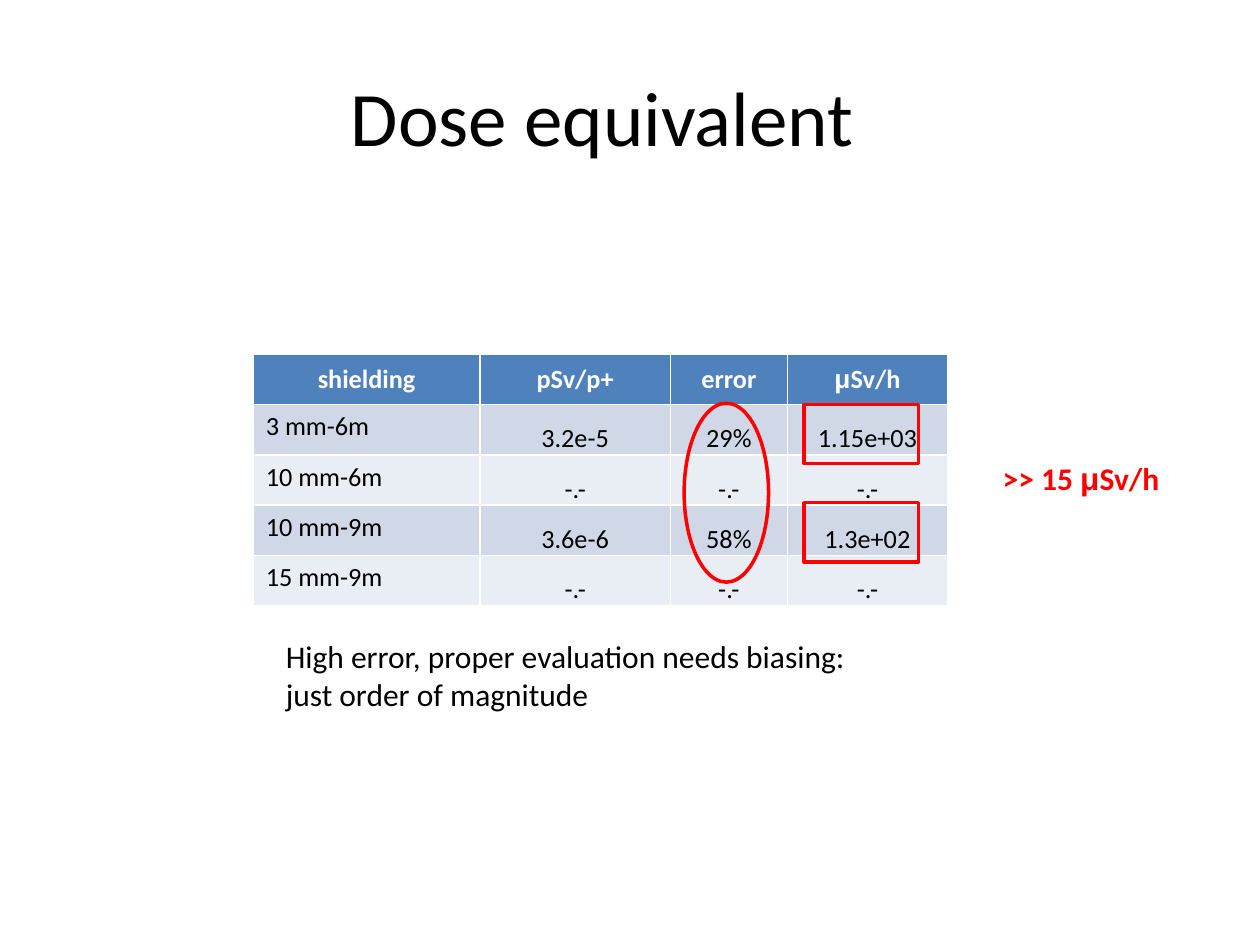
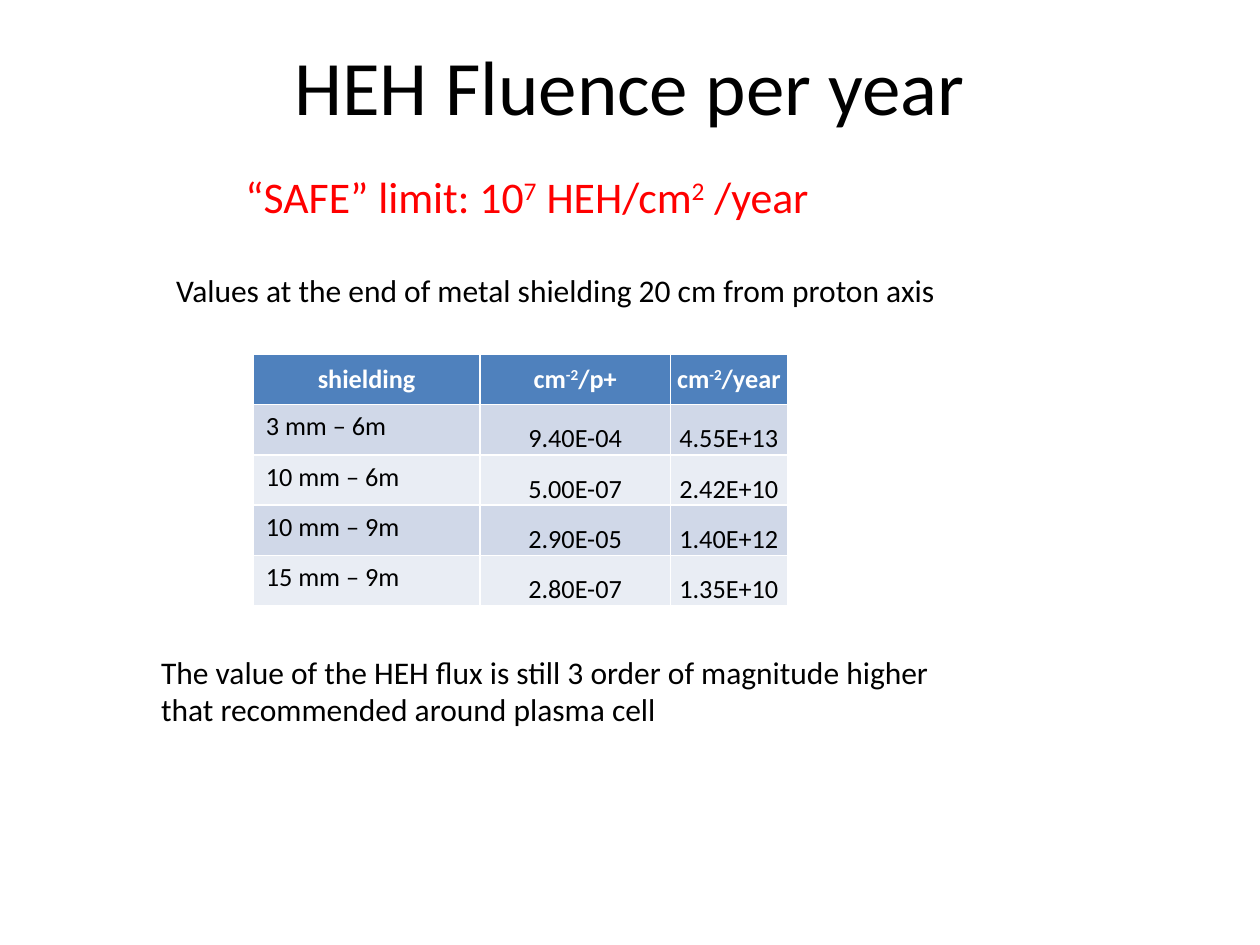
from pptx import Presentation
from pptx.dml.color import RGBColor
from pptx.enum.shapes import MSO_SHAPE
from pptx.enum.text import MSO_ANCHOR, MSO_AUTO_SIZE, PP_ALIGN
from pptx.util import Inches, Pt

BLACK = RGBColor(0, 0, 0)
WHITE = RGBColor(255, 255, 255)
RED = RGBColor(255, 0, 0)
HEAD = RGBColor(0x4F, 0x81, 0xBD)
BANDS = RGBColor(0xD0, 0xD8, 0xE8), RGBColor(0xE9, 0xED, 0xF4)

TITLE_ONLY = 5
TABLE_LEFT, TABLE_TOP, ROW = 2.01, 2.81, 0.4
WIDTHS = [1.8, 1.51, 0.93, 1.27]
EMPTY = "-.-"

DOSE = [
    [["shielding"], ["pSv/p+"], ["error"], ["μ", "Sv/h"]],
    [["3 mm-6m"], ["3.2e-5"], ["29%"], ["1.15e+03"]],
    [["10 mm-6m"], [EMPTY], [EMPTY], [EMPTY]],
    [["10 mm-9m"], ["3.6e-6"], ["58%"], ["1.3e+02"]],
    [["15 mm-9m"], [EMPTY], [EMPTY], [EMPTY]],
]
FLUENCE = [
    [["shielding"], ["cm", "^-2", "/p+"], ["cm", "^-2", "/year"]],
    [["3 mm – 6m"], ["9.40E-04"], ["4.55E+13"]],
    [["10 mm – 6m"], ["5.00E-07"], ["2.42E+10"]],
    [["10 mm – 9m"], ["2.90E-05"], ["1.40E+12"]],
    [["15 mm – 9m"], ["2.80E-07"], ["1.35E+10"]],
]


def add_runs(para, parts, size, color=BLACK, bold=False):
    """Add one run per part; a leading ^ makes it superscript."""
    for part in parts:
        run = para.add_run()
        run.text = part.removeprefix("^")
        font = run.font
        font.name = "Arial" if part == "μ" else "Calibri"
        font.size = Pt(size)
        font.bold = bold
        font.color.rgb = color
        if part.startswith("^"):
            font._element.set("baseline", "30000")


def add_slide(prs, title, left, top):
    slide = prs.slides.add_slide(prs.slide_layouts[TITLE_ONLY])
    shape = slide.shapes.title
    shape.left, shape.top = Inches(left), Inches(top)
    shape.width, shape.height = Inches(9), Inches(1.25)
    frame = shape.text_frame
    frame.vertical_anchor = MSO_ANCHOR.MIDDLE
    para = frame.paragraphs[0]
    para.alignment = PP_ALIGN.CENTER
    add_runs(para, [title], 44)
    return slide


def add_note(slide, box, parts, size=18, color=BLACK, bold=False):
    shape = slide.shapes.add_textbox(*map(Inches, box))
    frame = shape.text_frame
    frame.word_wrap = True
    frame.auto_size = MSO_AUTO_SIZE.SHAPE_TO_FIT_TEXT
    add_runs(frame.paragraphs[0], parts, size, color, bold)


def fill_cell(cell, parts, row, col, inset):
    head = row == 0
    cell.fill.solid()
    cell.fill.fore_color.rgb = HEAD if head else BANDS[(row - 1) % 2]
    para = cell.text_frame.paragraphs[0]
    if head or col:
        para.alignment = PP_ALIGN.CENTER
        cell.vertical_anchor = MSO_ANCHOR.MIDDLE if head else MSO_ANCHOR.BOTTOM
    if col:
        cell.margin_left = cell.margin_right = cell.margin_top = Inches(inset)
        cell.margin_bottom = 0
    add_runs(para, parts, 15, WHITE if head else BLACK, head)


def add_grid(slide, rows, inset=0.01):
    """Add a table; the template's table style draws its white rules."""
    widths = WIDTHS[:len(rows[0])]
    frame = slide.shapes.add_table(
        len(rows), len(widths), Inches(TABLE_LEFT), Inches(TABLE_TOP),
        Inches(sum(widths)), Inches(ROW * len(rows)))
    table = frame.table
    for column, width in zip(table.columns, widths):
        column.width = Inches(width)
    for r, row in enumerate(rows):
        table.rows[r].height = Inches(ROW)
        for c, parts in enumerate(row):
            fill_cell(table.cell(r, c), parts, r, c, inset if r else 0.01)


def add_mark(slide, kind, box):
    """Outline table values in red."""
    shape = slide.shapes.add_shape(kind, *map(Inches, box))
    shape.shadow.inherit = False
    shape.fill.background()
    shape.line.color.rgb = RED
    shape.line.width = Pt(2)


def build_dose(prs):
    slide = add_slide(prs, "Dose equivalent", 0.28, 0.29)
    add_grid(slide, DOSE)
    add_mark(slide, MSO_SHAPE.OVAL, (5.43, 3.2, 0.67, 1.42))
    add_note(slide, (2.17, 5.01, 4.8, 0.71),
             ["High error, proper evaluation needs biasing: "
              "just order of magnitude"])
    for top in (3.21, 3.99):
        add_mark(slide, MSO_SHAPE.RECTANGLE, (6.38, top, 0.91, 0.47))
    add_note(slide, (7.86, 3.59, 1.57, 0.4), [">> 15 ", "μ", "Sv/h"],
             color=RED, bold=True)


def build_fluence(prs):
    slide = add_slide(prs, "HEH Fluence per year", 0.5, 0.05)
    add_note(slide, (1.85, 1.3, 4.8, 0.52),
             ["“SAFE” limit: 10", "^7", " HEH/cm", "^2", " /year"], 25, RED)
    add_grid(slide, FLUENCE, inset=0)
    add_note(slide, (1.3, 2.1, 6.38, 0.4),
             ["Values at the end of metal shielding 20 cm from proton axis"])
    add_note(slide, (1.18, 5.13, 6.61, 0.71),
             ["The value of the HEH flux is still 3 order of magnitude higher "
              "that recommended around plasma cell"])


def main():
    prs = Presentation()
    prs.slide_width, prs.slide_height = Inches(10), Inches(7.5)
    build_dose(prs)
    build_fluence(prs)
    prs.save("out.pptx")


if __name__ == "__main__":
    main()
